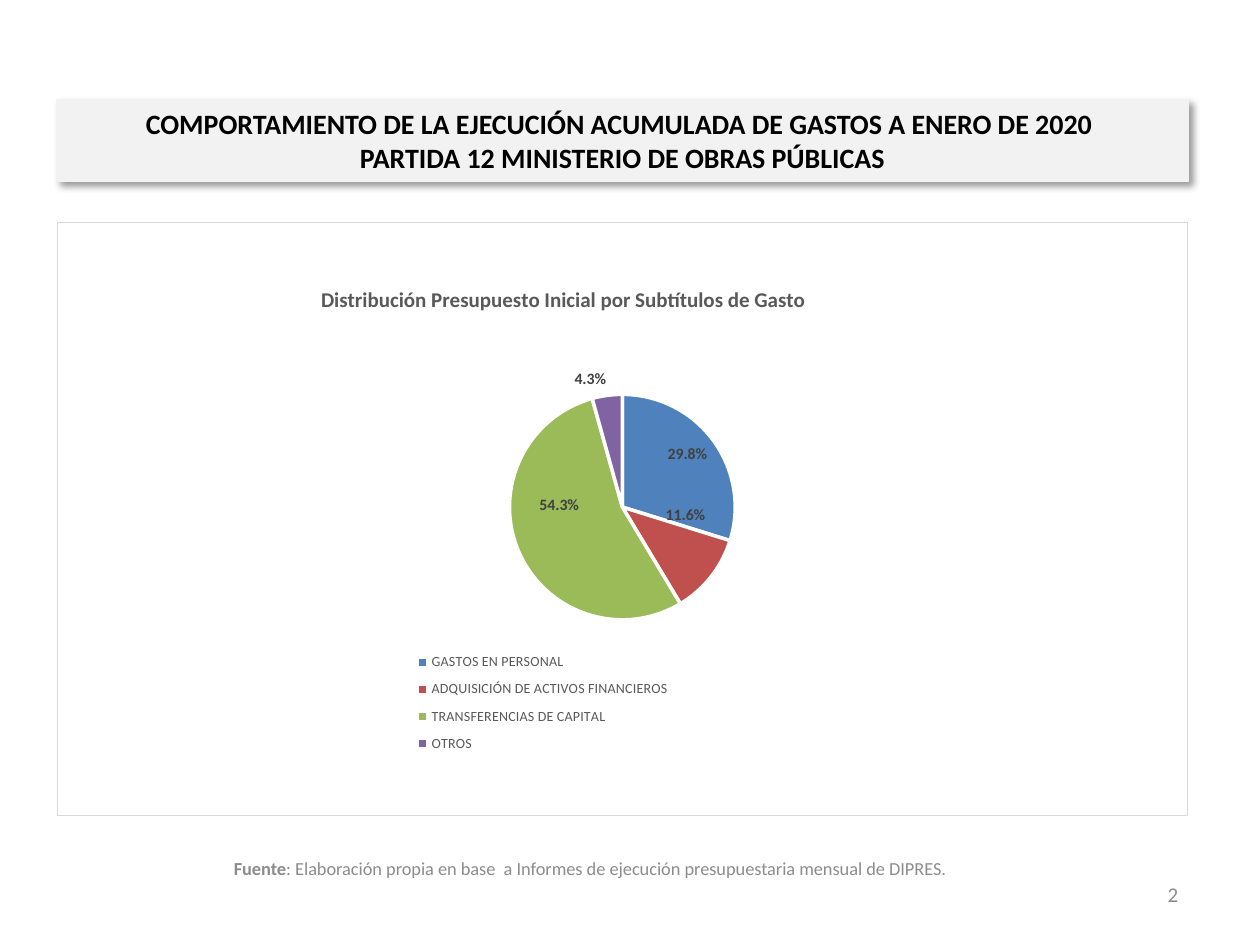
import copy
import pptx
import pptx.chart.data
import pptx.dml.color
import pptx.enum.chart
import pptx.enum.shapes
import pptx.enum.text
import pptx.oxml
import pptx.oxml.ns
import pptx.util

Inches = pptx.util.Inches
Color = pptx.dml.color.RGBColor
Align = pptx.enum.text.PP_ALIGN
Position = pptx.enum.chart.XL_LABEL_POSITION
qn = pptx.oxml.ns.qn

HEADING = ("COMPORTAMIENTO DE LA EJECUCIÓN ACUMULADA DE GASTOS A ENERO DE 2020 \v"
           "PARTIDA 12 MINISTERIO DE OBRAS PÚBLICAS")
CHART_TITLE = "Distribución Presupuesto Inicial por Subtítulos de Gasto"
SOURCE = [("Fuente", True),
          (": Elaboración propia en base  a Informes de ejecución presupuestaria mensual de DIPRES.", False)]
PAGE_NUMBER = "2"
SLICES = [
    ("GASTOS EN PERSONAL", 29.8, Color(0x4F, 0x81, 0xBD), Position.INSIDE_END, None),
    ("ADQUISICIÓN DE ACTIVOS FINANCIEROS", 11.6, Color(0xC0, 0x50, 0x4D), Position.INSIDE_END, (0, -0.08)),
    ("TRANSFERENCIAS DE CAPITAL", 54.3, Color(0x9B, 0xBB, 0x59), Position.CENTER, (-0.01, -0.04)),
    ("OTROS", 4.3, Color(0x80, 0x64, 0xA2), Position.OUTSIDE_END, None),
]

FONT = "Calibri"
BLACK = Color(0, 0, 0)
WHITE = Color(0xFF, 0xFF, 0xFF)
FOOTER_GRAY = Color(0x8C, 0x8C, 0x8C)
TITLE_GRAY = Color(0x59, 0x59, 0x59)
LABEL_GRAY = Color(0x40, 0x40, 0x40)
BAND_GRAY = Color(0xF2, 0xF2, 0xF2)

MARGIN, CONTENT_WIDTH = 0.45, 8.98

SHADOW = """<a:effectLst %s><a:outerShdw blurRad="50800" dist="38100" dir="2700000" algn="tl" rotWithShape="0">
<a:srgbClr val="000000"><a:alpha val="40000"/></a:srgbClr></a:outerShdw></a:effectLst>""" % pptx.oxml.ns.nsdecls("a")
CHART_FRAME = """<c:spPr %s><a:solidFill><a:srgbClr val="FFFFFF"/></a:solidFill>
<a:ln w="9525"><a:solidFill><a:srgbClr val="D9D9D9"/></a:solidFill></a:ln></c:spPr>""" % pptx.oxml.ns.nsdecls("c", "a")


def format_font(font, size, color, bold=False):
    font.name = FONT
    font.size = pptx.util.Pt(size)
    font.bold = bold
    font.color.rgb = color


def write_text(shape, runs, size, color, align):
    frame = shape.text_frame
    frame.word_wrap = True
    frame.vertical_anchor = pptx.enum.text.MSO_ANCHOR.MIDDLE
    paragraph = frame.paragraphs[0]
    paragraph.alignment = align
    for text, bold in runs:
        for index, line in enumerate(text.split("\v")):
            if index:
                paragraph.add_line_break()
            run = paragraph.add_run()
            run.text = line
            format_font(run.font, size, color, bold)


def set_layout(element, index, **settings):
    for old in element.findall(qn("c:layout")):
        element.remove(old)
    items = "".join(f'<c:{key} val="{value}"/>' for key, value in settings.items())
    element.insert(index, pptx.oxml.parse_xml(
        f'<c:layout {pptx.oxml.ns.nsdecls("c")}><c:manualLayout>{items}</c:manualLayout></c:layout>'))


def add_heading(slide):
    band = slide.shapes.add_shape(pptx.enum.shapes.MSO_SHAPE.RECTANGLE, Inches(MARGIN), Inches(0.79),
                                  Inches(CONTENT_WIDTH), Inches(0.65))
    band.fill.solid()
    band.fill.fore_color.rgb = BAND_GRAY
    band.line.color.rgb = BAND_GRAY
    band.line.width = pptx.util.Pt(0.75)
    band._element.spPr.append(pptx.oxml.parse_xml(SHADOW))
    write_text(band, [(HEADING, True)], 16, BLACK, Align.CENTER)


def format_labels(series):
    labels = series.data_labels
    labels.show_value = False
    labels.show_percentage = True
    labels.number_format = "0.0%"
    labels.number_format_is_linked = False
    format_font(labels.font, 9, LABEL_GRAY, True)
    number_format = labels._element.find(qn("c:numFmt"))
    for index, (_, _, color, position, shift) in enumerate(SLICES):
        point = series.points[index]
        point.format.fill.solid()
        point.format.fill.fore_color.rgb = color
        point.format.line.color.rgb = WHITE
        point.format.line.width = pptx.util.Pt(2)
        format_font(point.data_label.font, 9, LABEL_GRAY, True)
        point.data_label.position = position
        label = labels._element.findall(qn("c:dLbl"))[index]
        label.insert(1, copy.deepcopy(number_format))
        label.find(qn("c:showVal")).set("val", "0")
        label.find(qn("c:showPercent")).set("val", "1")
        if shift:
            set_layout(label, 1, x=shift[0], y=shift[1])


def add_pie(slide):
    data = pptx.chart.data.CategoryChartData()
    data.categories = [item[0] for item in SLICES]
    data.add_series("Series 1", [item[1] for item in SLICES])
    chart = slide.shapes.add_chart(pptx.enum.chart.XL_CHART_TYPE.PIE, Inches(MARGIN), Inches(1.76),
                                   Inches(CONTENT_WIDTH), Inches(4.72), data).chart
    format_font(chart.font, 10, BLACK)
    chart.has_title = True
    run = chart.chart_title.text_frame.paragraphs[0].add_run()
    run.text = CHART_TITLE
    format_font(run.font, 12, TITLE_GRAY, True)
    chart.has_legend = True
    chart.legend.position = pptx.enum.chart.XL_LEGEND_POSITION.BOTTOM
    chart.legend.include_in_layout = False
    format_font(chart.legend.font, 8, TITLE_GRAY)
    chart.plots[0].vary_by_categories = True
    format_labels(chart.plots[0].series[0])

    space = chart._chartSpace
    space.find(qn("c:chart")).addnext(pptx.oxml.parse_xml(CHART_FRAME))
    set_layout(chart.chart_title._element, 1, xMode="edge", yMode="edge", x=0.23, y=0.1)
    set_layout(chart.legend._element, 1, xMode="edge", yMode="edge", x=0.31, y=0.71, w=0.24, h=0.2)
    set_layout(space.find(".//" + qn("c:plotArea")), 0, layoutTarget="inner", xMode="edge", yMode="edge",
               x=0, y=0.29, w=1, h=0.38)


def main():
    presentation = pptx.Presentation()
    presentation.slide_width = Inches(10)
    presentation.slide_height = Inches(7.5)
    slide = presentation.slides.add_slide(presentation.slide_layouts[6])
    footers = [
        (SOURCE, (0.59, 6.69, 8.19, 0.4), 10.5, Align.CENTER),
        ([(PAGE_NUMBER, False)], (7.12, 6.9, 2.33, 0.4), 12, Align.RIGHT),
    ]
    for runs, box, size, align in footers:
        textbox = slide.shapes.add_textbox(*map(Inches, box))
        write_text(textbox, runs, size, FOOTER_GRAY, align)
    add_heading(slide)
    add_pie(slide)
    presentation.save("out.pptx")


if __name__ == "__main__":
    main()
